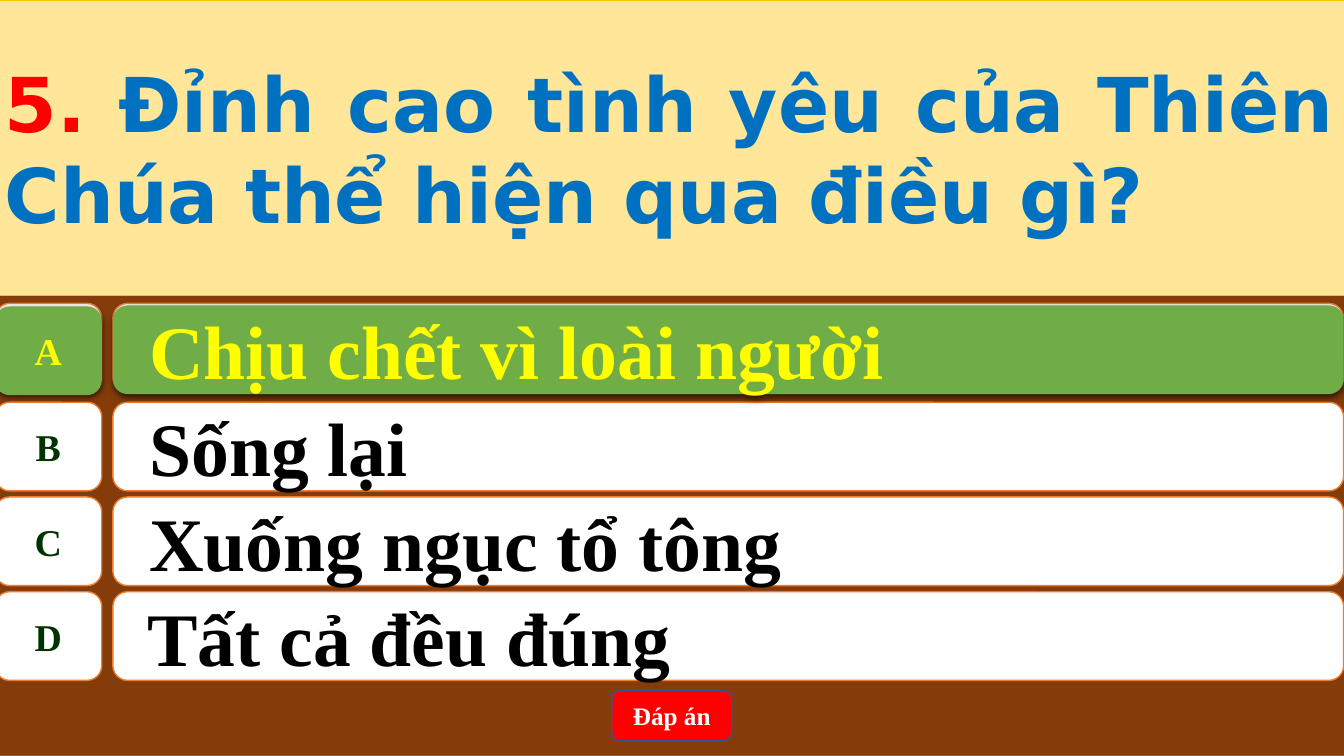
"""Build a quiz slide with one question, four answers and the right one highlighted."""

from dataclasses import dataclass
from typing import Optional

import lxml.etree
import pptx
import pptx.dml.color
import pptx.enum.shapes
import pptx.enum.text
import pptx.oxml.ns
import pptx.util

RGB = pptx.dml.color.RGBColor
SHAPE = pptx.enum.shapes.MSO_SHAPE
ALIGN = pptx.enum.text.PP_ALIGN

BROWN = RGB(0x84, 0x3C, 0x0B)
STEEL = RGB(0x43, 0x73, 0x9E)
CREAM = RGB(0xFF, 0xE6, 0x99)
GOLD = RGB(0xFF, 0xC0, 0x00)
WHITE = RGB(0xFF, 0xFF, 0xFF)
BLACK = RGB(0x00, 0x00, 0x00)
ORANGE = RGB(0xED, 0x7D, 0x31)
GREEN = RGB(0x70, 0xAD, 0x47)
DARK_GREEN = RGB(0x00, 0x33, 0x00)
YELLOW = RGB(0xFF, 0xFF, 0x00)
RED = RGB(0xFF, 0x00, 0x00)
BLUE = RGB(0x00, 0x70, 0xC0)
NAVY = RGB(0x32, 0x54, 0x91)

SERIF = "Times New Roman"
SANS = "DejaVu Sans"

WIDTH = pptx.util.Inches(13.33)
HEIGHT = pptx.util.Inches(7.5)
COLS, ROWS = 160, 90

EDGE = -0.6
FULL = 160.68
LABEL_W = 12.72
ANSWER_X, ANSWER_W = 13.44, 146.52
BAR_H = 10.56
FIRST_ROW, ROW_STEP = 36.6, 11.28


@dataclass(frozen=True)
class Box:
    """A rectangle in grid columns and rows."""

    col: float
    row: float
    cols: float
    rows: float


@dataclass(frozen=True)
class Answer:
    """One answer bar with its letter and paragraph indent."""

    letter: str
    text: str
    row: float
    level: int = 1
    margin: float = 0.5
    indent: float = -0.28


ANSWERS = [
    Answer("A", "Chịu chết vì loài người", FIRST_ROW - 0.48),
    Answer("B", "Sống lại", FIRST_ROW + ROW_STEP),
    Answer("C", "Xuống ngục tổ tông", FIRST_ROW + 2 * ROW_STEP),
    Answer("D", "Tất cả đều đúng", FIRST_ROW + 3 * ROW_STEP, 0, 0.2, 0),
]


def add_box(s, kind, box: Box, fill: RGB, line: Optional[RGB] = None, weight: float = 1):
    """Add a filled preset shape placed on the grid."""
    sp = s.shapes.add_shape(
        kind,
        round(WIDTH * box.col / COLS),
        round(HEIGHT * box.row / ROWS),
        round(WIDTH * box.cols / COLS),
        round(HEIGHT * box.rows / ROWS),
    )
    sp.shadow.inherit = False
    sp.fill.solid()
    sp.fill.fore_color.rgb = fill
    if line is None:
        sp.line.fill.background()
    else:
        sp.line.color.rgb = line
        sp.line.width = pptx.util.Pt(weight)
    return sp


def add_text(sp, text: str, *, size: float, color: RGB, font: str = SERIF,
             align=ALIGN.LEFT, wrap: bool = True, level: int = 0,
             margin: float = 0, indent: float = 0) -> None:
    """Append a bold run to the shape's paragraph and format both."""
    tf = sp.text_frame
    tf.word_wrap = wrap
    tf.vertical_anchor = pptx.enum.text.MSO_ANCHOR.MIDDLE
    p = tf.paragraphs[0]
    p.alignment = align
    p.level = level
    pPr = p._p.get_or_add_pPr()
    pPr.set("marL", str(pptx.util.Inches(margin)))
    pPr.set("indent", str(pptx.util.Inches(indent)))
    r = p.add_run()
    r.text = text
    r.font.name = font
    r.font.size = pptx.util.Pt(size)
    r.font.bold = True
    r.font.color.rgb = color


def add_shadow(sp) -> None:
    """Give the shape a soft black shadow below it."""
    qn = pptx.oxml.ns.qn
    effects = sp._element.spPr.find(qn("a:effectLst"))
    shadow = lxml.etree.SubElement(
        effects, qn("a:outerShdw"), blurRad=str(pptx.util.Pt(4.5)),
        dist=str(pptx.util.Pt(1.5)), dir="5400000", algn="ctr", rotWithShape="0",
    )
    color = lxml.etree.SubElement(shadow, qn("a:srgbClr"), val=str(BLACK))
    lxml.etree.SubElement(color, qn("a:alpha"), val="63000")


def add_answer(s, answer: Answer, highlight: bool = False) -> None:
    """Draw an answer's letter and bar, plain or highlighted."""
    fill, line = (GREEN, None) if highlight else (WHITE, ORANGE)
    bar_row = answer.row + (0.24 if highlight else 0)
    label_row = answer.row + (0.36 if highlight else 0)
    bar = add_box(s, SHAPE.ROUNDED_RECTANGLE,
                  Box(ANSWER_X, bar_row, ANSWER_W, BAR_H), fill, line)
    add_text(bar, answer.text, size=54, color=YELLOW if highlight else BLACK,
             level=answer.level, margin=answer.margin, indent=answer.indent)
    label = add_box(s, SHAPE.FLOWCHART_ALTERNATE_PROCESS,
                    Box(EDGE, label_row, LABEL_W, BAR_H), fill, line)
    add_text(label, answer.letter, size=27, color=YELLOW if highlight else DARK_GREEN,
             align=ALIGN.CENTER, wrap=False)
    if highlight:
        add_shadow(bar)
        add_shadow(label)


def main() -> None:
    """Assemble and save the slide."""
    prs = pptx.Presentation()
    prs.slide_width, prs.slide_height = WIDTH, HEIGHT
    s = prs.slides.add_slide(prs.slide_layouts[6])

    add_box(s, SHAPE.RECTANGLE, Box(EDGE, 0, FULL, ROWS), BROWN, STEEL)
    for answer in ANSWERS:
        add_answer(s, answer)

    button = add_box(s, SHAPE.ROUNDED_RECTANGLE, Box(72.84, 82.2, 14.28, 6), RED, NAVY)
    add_text(button, "Đáp án", size=18, color=WHITE, align=ALIGN.CENTER)

    question = add_box(s, SHAPE.RECTANGLE, Box(EDGE, 0, FULL, 35.16), CREAM, GOLD, 0.5)
    add_text(question, "5. ", size=54, color=RED, font=SANS, align=ALIGN.JUSTIFY)
    add_text(question, "Đỉnh cao tình yêu của Thiên Chúa thể hiện qua điều gì?",
             size=54, color=BLUE, font=SANS, align=ALIGN.JUSTIFY)

    add_answer(s, ANSWERS[0], highlight=True)
    prs.save("out.pptx")


if __name__ == "__main__":
    main()
